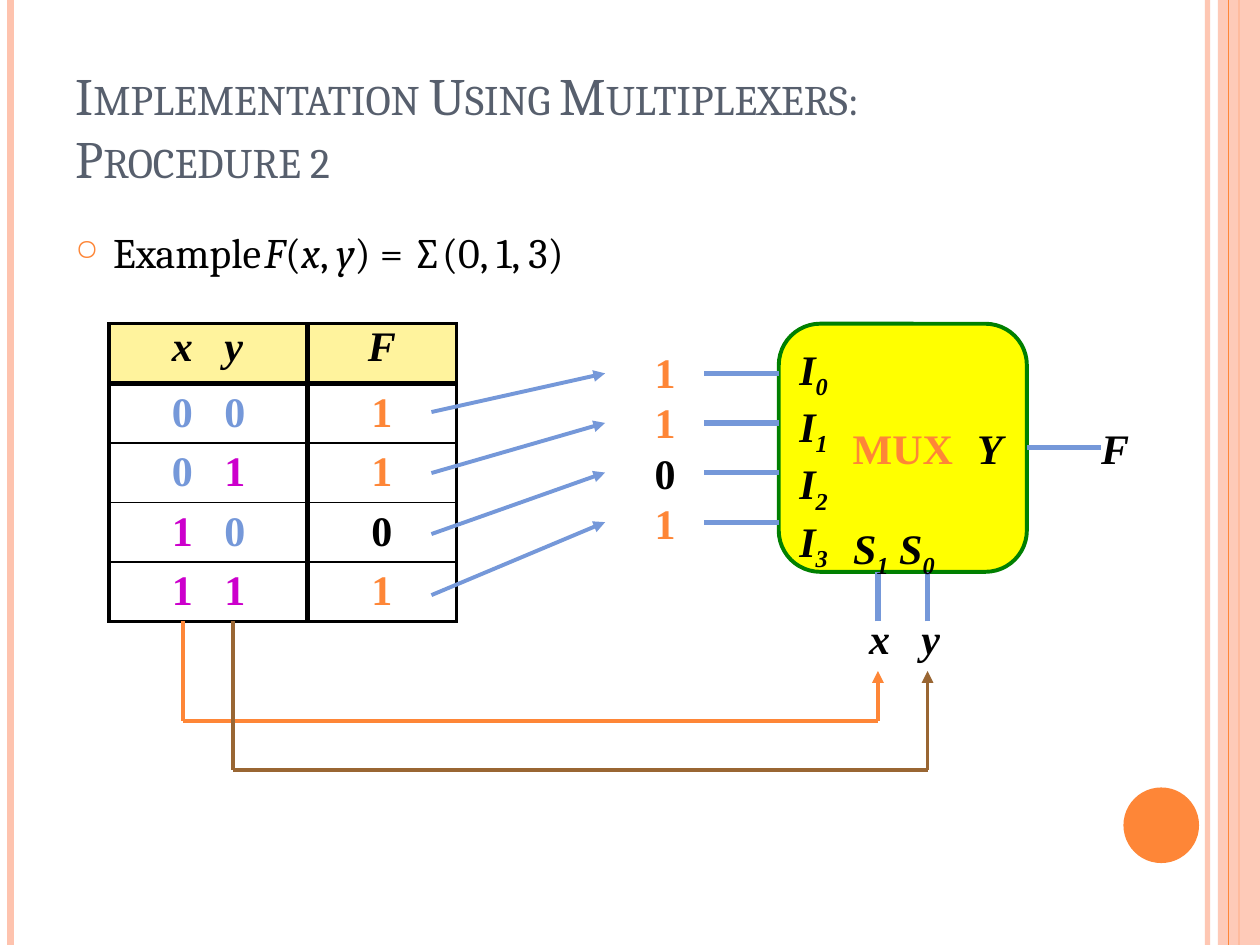
from dataclasses import dataclass
from typing import Optional

from lxml.etree import SubElement as Sub
from pptx import Presentation as Deck
from pptx.dml.color import RGBColor as Rgb
from pptx.enum.shapes import MSO_CONNECTOR as Conn, MSO_SHAPE as Form
from pptx.enum.text import MSO_ANCHOR as Anchor, PP_ALIGN as Align
from pptx.oxml.ns import qn
from pptx.util import Pt


@dataclass(frozen=True)
class Theme:
    ink: str = "000000"
    slate: str = "575F6D"
    blue: str = "7598D9"
    flame: str = "FE8637"
    peach: str = "FEC3AE"
    pink: str = "CC00CC"
    brown: str = "996633"
    cream: str = "FFF39D"
    gold: str = "FFFF00"
    green: str = "008000"
    serif: str = "Cambria"
    roman: str = "Times New Roman"
    head: float = 30
    size: float = 24
    thin: float = 1
    edge: float = 2.25
    thick: float = 3


@dataclass(frozen=True)
class Part:
    text: str
    color: str = Theme.ink
    slant: bool = False
    sub: bool = False
    bold: bool = True
    font: str = Theme.roman


@dataclass(frozen=True)
class Wire:
    start: tuple
    end: tuple
    color: str = Theme.blue
    width: float = Theme.thick
    arrow: bool = False


@dataclass(frozen=True)
class Label:
    left: float
    top: float
    width: float
    height: float
    lines: list
    align: Align = Align.LEFT
    stop: Optional[float] = None


T = Theme()
UNIT = 28.35
LEFT, TOP = 445, 185
STOP = 30


def at(col: float, row: float) -> tuple:
    return LEFT + col * UNIT, TOP + row * UNIT


def var(name: str, sub: str = "") -> list:
    parts = [Part(name, slant=True)]
    return parts + [Part(sub, slant=True, sub=True)] if sub else parts


def fade(fill, alpha: int) -> None:
    Sub(fill.find(".//" + qn("a:srgbClr")), qn("a:alpha"), val=str(alpha * 1000))


def write(para, parts: list, align: Align = Align.LEFT, stop: Optional[float] = None) -> None:
    para.alignment = align
    for part in parts:
        run = para.add_run()
        run.text = part.text
        font = run.font
        font.name, font.size = part.font, Pt(T.size)
        font.bold, font.italic = part.bold, part.slant
        font.color.rgb = Rgb.from_string(part.color)
        if part.sub:
            run._r.get_or_add_rPr().set("baseline", "-25000")
    if stop:
        tabs = Sub(para._p.get_or_add_pPr(), qn("a:tabLst"))
        Sub(tabs, qn("a:tab"), pos=str(Pt(stop)), algn="l")


def clear(frame) -> None:
    frame.margin_left = frame.margin_right = frame.margin_top = frame.margin_bottom = 0


def draw_label(slide, item: Label) -> None:
    box = slide.shapes.add_textbox(Pt(item.left), Pt(item.top), Pt(item.width), Pt(item.height))
    frame = box.text_frame
    frame.word_wrap = True
    clear(frame)
    for i, parts in enumerate(item.lines):
        para = frame.add_paragraph() if i else frame.paragraphs[0]
        write(para, parts, item.align, item.stop)


def draw_wire(slide, wire: Wire, alpha: int = 100) -> None:
    line = slide.shapes.add_connector(Conn.STRAIGHT, *map(Pt, wire.start + wire.end))
    line.line.color.rgb = Rgb.from_string(wire.color)
    line.line.width = Pt(wire.width)
    props = line._element.spPr
    if alpha < 100:
        fade(props, alpha)
    if wire.arrow:
        Sub(props.find(qn("a:ln")), qn("a:tailEnd"), type="triangle")
    Sub(props, qn("a:effectLst"))


def draw_form(slide, kind: Form, place: tuple, color: str):
    form = slide.shapes.add_shape(kind, *map(Pt, place))
    form.shadow.inherit = False
    form.fill.solid()
    form.fill.fore_color.rgb = Rgb.from_string(color)
    form.line.fill.background()
    return form


def draw_frame(slide) -> None:
    for x, color, width, alpha in [(690, T.peach, 3, 93), (6, T.peach, 4.5, 100), (708, T.flame, 1.5, 100)]:
        draw_wire(slide, Wire((x, 0), (x, 540), color, width), alpha)
    band = draw_form(slide, Form.RECTANGLE, (696, 0, 24, 540), T.peach)
    fade(band._element.spPr, 87)
    draw_wire(slide, Wire((702, 0), (702, 540), T.flame, 0.75))
    draw_form(slide, Form.OVAL, (642, 450, 43.2, 43.2), T.flame)


def draw_text(slide) -> None:
    frame = slide.shapes.add_textbox(Pt(36), Pt(21.6), Pt(606), Pt(90)).text_frame
    frame.word_wrap = True
    frame.vertical_anchor = Anchor.BOTTOM
    frame.text = "Implementation Using Multiplexers:\vProcedure 2"
    for run in frame.paragraphs[0].runs:
        run.font.name, run.font.size = T.serif, Pt(T.head)
        run.font.color.rgb = Rgb.from_string(T.slate)
        run._r.get_or_add_rPr().set("cap", "small")

    frame = slide.shapes.add_textbox(Pt(36), Pt(126), Pt(606), Pt(384)).text_frame
    frame.word_wrap = True
    para = frame.paragraphs[0]
    para.space_before = Pt(6)
    words = ["Example\t", "F", "(", "x", ", ", "y", ") = ∑(0, 1, 3)"]
    write(para, [Part(w, slant=w in "Fxy", bold=False, font=T.serif) for w in words])
    props = para._p.get_or_add_pPr()
    props.set("marL", str(Pt(21.6)))
    props.set("indent", str(Pt(-21.6)))
    Sub(Sub(props, qn("a:buClr")), qn("a:srgbClr"), val=T.flame)
    Sub(props, qn("a:buSzPct"), val="70000")
    Sub(props, qn("a:buChar"), char="○")


def edge(cell, sides: dict) -> None:
    props = cell._tc.get_or_add_tcPr()
    for i, (side, width) in enumerate(sides.items()):
        line = props.makeelement(qn("a:ln" + side), {"w": str(Pt(width))})
        Sub(Sub(line, qn("a:solidFill")), qn("a:srgbClr"), val=T.ink)
        props.insert(i, line)


def draw_table(slide) -> None:
    hue = {"0": T.blue, "1": T.pink}
    rows = [(var("x\ty"), var("F"))]
    for x, y, out in ["001", "011", "100", "111"]:
        pair = [Part(x + "\t", hue[x]), Part(y, hue[y])]
        rows.append((pair, [Part(out, T.flame if out == "1" else T.ink)]))
    x, y = at(-13.5, 0)
    grid = slide.shapes.add_table(5, 2, Pt(x), Pt(y), Pt(7 * UNIT), Pt(6 * UNIT)).table
    grid.first_row = grid.horz_banding = False
    for col, span in zip(grid.columns, (4, 3)):
        col.width = Pt(span * UNIT)
    for r, row in enumerate(rows):
        grid.rows[r].height = Pt(1.2 * UNIT)
        for c, parts in enumerate(row):
            cell = grid.cell(r, c)
            clear(cell)
            cell.vertical_anchor = Anchor.MIDDLE if r else Anchor.TOP
            if r:
                cell.fill.background()
            else:
                cell.fill.solid()
                cell.fill.fore_color.rgb = Rgb.from_string(T.cream)
            if c:
                write(cell.text_frame.paragraphs[0], parts, Align.CENTER)
            else:
                cell.margin_left = Pt(36)
                write(cell.text_frame.paragraphs[0], parts, stop=STOP)
            edge(cell, {
                "L": T.thick if c else T.edge,
                "R": T.edge if c else T.thick,
                "T": {0: T.edge, 1: T.thick}.get(r, T.thin),
                "B": {0: T.thick, 4: T.edge}.get(r, T.thin),
            })


def draw_mux(slide) -> None:
    box = draw_form(slide, Form.ROUNDED_RECTANGLE, at(0, 0) + (5 * UNIT, 5 * UNIT), T.gold)
    box.line.color.rgb = Rgb.from_string(T.green)
    box.line.width = Pt(T.edge)
    frame = box.text_frame
    clear(frame)
    frame.word_wrap = False
    frame.vertical_anchor = Anchor.MIDDLE
    write(frame.paragraphs[0], [Part("MUX", T.flame)], Align.CENTER)

    pins = [Wire(at(-1.5, i), at(0, i)) for i in range(1, 5)]
    pins += [Wire(at(i, 6), at(i, 5)) for i in (2, 3)]
    pins.append(Wire(at(5, 2.5), at(6.5, 2.5)))
    for pin in pins:
        draw_wire(slide, pin)

    ports = [var("I", str(i)) for i in range(4)]
    bits = [[Part(b, T.flame if b == "1" else T.ink)] for b in "1101"]
    for item in [
        Label(*at(4, 2), 28, 28.8, [var("Y")]),
        Label(*at(0, 0.39), 28, 115, ports, Align.RIGHT),
        Label(*at(1.5, 4), 71, 28.8, [var("S", "1") + var(" S", "0")]),
        Label(*at(1.82, 5.82), 47, 28.8, [var("x\ty")], stop=STOP),
        Label(*at(6.5, 2), 42.5, 28.8, [var("F")]),
        Label(*at(-2.5, 0.46), 23, 115, bits),
    ]:
        draw_label(slide, item)


def draw_links(slide) -> None:
    for col, low, color in [(2, 8, T.flame), (3, 9, T.brown)]:
        stops = [at(col - 14, 6), at(col - 14, low), at(col, low), at(col, 7)]
        for i in range(3):
            draw_wire(slide, Wire(stops[i], stops[i + 1], color, T.edge, i == 2))
    for i in range(4):
        draw_wire(slide, Wire(at(-7, 1.78 + 1.23 * i), at(-3.5, i + 1), T.blue, T.edge, True))


def main() -> None:
    deck = Deck()
    deck.slide_width, deck.slide_height = Pt(720), Pt(540)
    slide = deck.slides.add_slide(deck.slide_layouts[6])
    for draw in (draw_frame, draw_text, draw_mux, draw_table, draw_links):
        draw(slide)
    deck.save("out.pptx")


if __name__ == "__main__":
    main()
